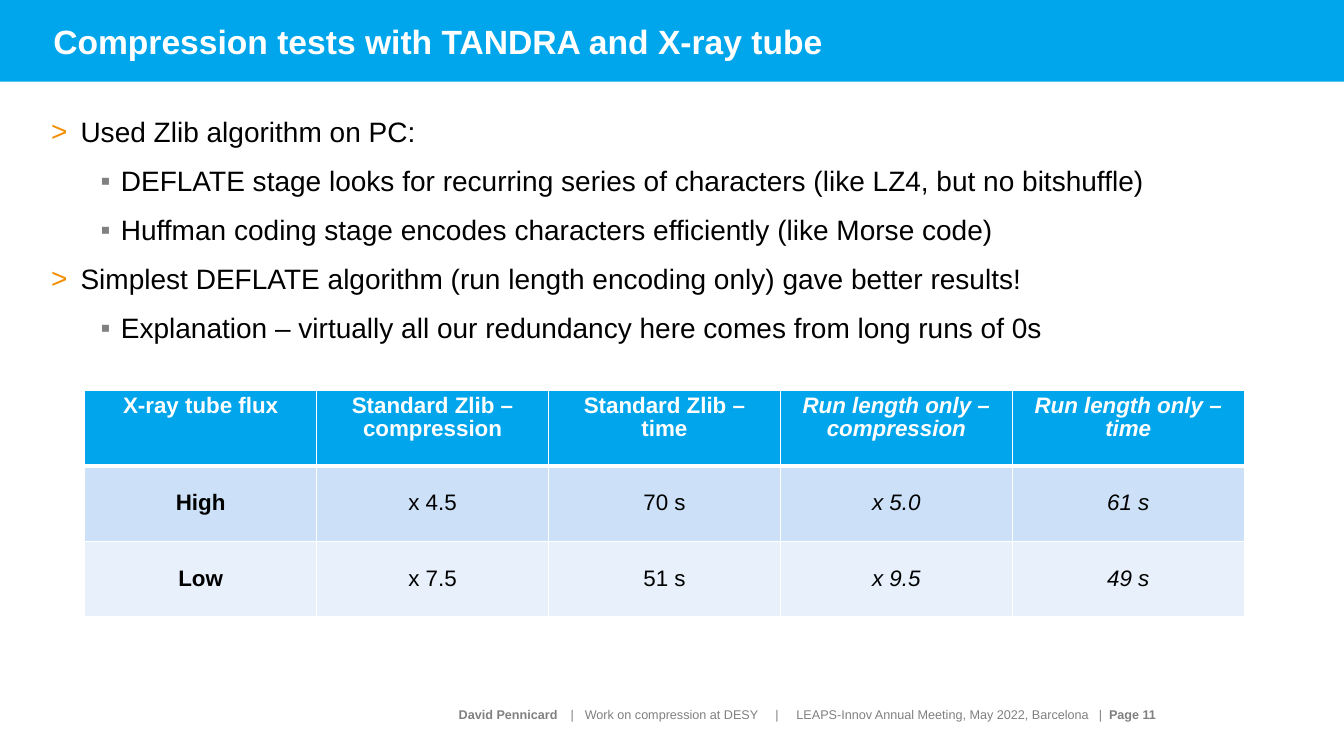
"""Build the slide on compression tests with TANDRA and an X-ray tube."""
from dataclasses import dataclass

import pptx
import pptx.dml.color
import pptx.enum.shapes
import pptx.enum.text
import pptx.oxml
import pptx.oxml.ns
import pptx.util

SCALE = 9144
ANCHOR = pptx.enum.text.MSO_ANCHOR
ALIGN = pptx.enum.text.PP_ALIGN


@dataclass(frozen=True)
class Theme:
    font: str = "Arial"
    banner: str = "00A6EB"
    header: str = "00A5EB"
    bands: tuple[str, ...] = ("CCE1F7", "E7F0FB")
    white: str = "FFFFFF"
    black: str = "000000"
    grey: str = "808080"
    orange: str = "F28E00"
    title_size: int = 24
    body_size: int = 20
    table_size: int = 16
    footer_size: int = 9


THEME = Theme()


@dataclass(frozen=True)
class Frame:
    left: int
    top: int
    width: int
    height: int

    def emu(self) -> tuple[int, ...]:
        return tuple(px(side) for side in (self.left, self.top, self.width, self.height))


@dataclass(frozen=True)
class Style:
    size: int
    color: str
    bold: bool = False
    italic: bool = False


@dataclass(frozen=True)
class Level:
    mark: str
    color: str
    margin: int
    hanging: int


@dataclass(frozen=True)
class Point:
    level: Level
    text: str


MAIN = Level(">", THEME.orange, 29, 29)
SUB = Level("▪", THEME.grey, 69, 20)
POINTS = (
    Point(MAIN, "Used Zlib algorithm on PC:"),
    Point(SUB, "DEFLATE stage looks for recurring series of characters (like LZ4, but no bitshuffle)"),
    Point(SUB, "Huffman coding stage encodes characters efficiently (like Morse code)"),
    Point(MAIN, "Simplest DEFLATE algorithm (run length encoding only) gave better results!"),
    Point(SUB, "Explanation – virtually all our redundancy here comes from long runs of 0s"),
)
RESULTS = (
    ("X-ray tube flux", "Standard Zlib – compression", "Standard Zlib – time",
     "Run length only – compression", "Run length only – time"),
    ("High", "x 4.5", "70 s", "x 5.0", "61 s"),
    ("Low", "x 7.5", "51 s", "x 9.5", "49 s"),
)
FIRST_ITALIC_COLUMN = 3
FOOTER = (
    ("David Pennicard", True),
    ("\t|\tWork on compression at DESY\t|\tLEAPS-Innov Annual Meeting, May 2022, Barcelona\t|\t", False),
    ("Page 11", True),
)
FOOTER_TABS = (111, 125, 314, 335, 635, 645)


def px(length: int) -> int:
    return length * SCALE


def rgb(color: str) -> pptx.dml.color.RGBColor:
    return pptx.dml.color.RGBColor.from_string(color)


def add_element(parent, tag: str, **attributes):
    child = pptx.oxml.parse_xml(f"<{tag} {pptx.oxml.ns.nsdecls('a')}/>")
    for name, value in attributes.items():
        child.set(name, str(value))
    parent.append(child)
    return child


def add_span(para, text: str, style: Style) -> None:
    span = para.add_run()
    span.text = text
    span.font.name = THEME.font
    span.font.size = pptx.util.Pt(style.size)
    span.font.bold = style.bold
    span.font.italic = style.italic
    span.font.color.rgb = rgb(style.color)


def add_box(page, frame: Frame, anchor):
    text_frame = page.shapes.add_textbox(*frame.emu()).text_frame
    text_frame.word_wrap = True
    text_frame.vertical_anchor = anchor
    return text_frame


def add_banner(page) -> None:
    banner = page.shapes.add_shape(
        pptx.enum.shapes.MSO_SHAPE.RECTANGLE, *Frame(0, 0, 1333, 81).emu())
    banner.shadow.inherit = False
    banner.fill.solid()
    banner.fill.fore_color.rgb = rgb(THEME.banner)
    banner.line.fill.background()
    title = add_box(page, Frame(43, 11, 1242, 60), ANCHOR.MIDDLE)
    add_span(title.paragraphs[0], "Compression tests with TANDRA and X-ray tube",
             Style(THEME.title_size, THEME.white, bold=True))


def add_points(page) -> None:
    body = add_box(page, Frame(41, 109, 1242, 268), ANCHOR.TOP)
    for index, point in enumerate(POINTS):
        para = body.add_paragraph() if index else body.paragraphs[0]
        level = point.level
        properties = para._p.get_or_add_pPr()
        properties.set("marL", str(px(level.margin)))
        properties.set("indent", str(px(-level.hanging)))
        bullet_color = add_element(properties, "a:buClr")
        add_element(bullet_color, "a:srgbClr", val=level.color)
        add_element(properties, "a:buFont", typeface=THEME.font)
        add_element(properties, "a:buChar", char=level.mark)
        para.level = int(level is SUB)
        para.space_after = pptx.util.Pt(11)
        add_span(para, point.text, Style(THEME.body_size, THEME.black))


def set_borders(cell, top: int, bottom: int) -> None:
    properties = cell._tc.get_or_add_tcPr()
    widths = {"L": 1, "R": 1, "T": top, "B": bottom}
    for position, (side, width) in enumerate(widths.items()):
        line = add_element(properties, f"a:ln{side}", w=pptx.util.Pt(width))
        add_element(add_element(line, "a:solidFill"), "a:srgbClr", val=THEME.white)
        properties.insert(position, line)


def add_results(page) -> None:
    rows, columns = len(RESULTS), len(RESULTS[0])
    table = page.shapes.add_table(
        rows, columns, *Frame(84, 387, columns * 230, rows * 75).emu()).table
    table.first_row = table.horz_banding = False
    for row, texts in enumerate(RESULTS):
        heading = row == 0
        for column, text in enumerate(texts):
            cell = table.cell(row, column)
            cell.fill.solid()
            cell.fill.fore_color.rgb = rgb(THEME.header if heading else THEME.bands[row - 1])
            set_borders(cell, 3 if row == 1 else 1, 3 if heading else 1)
            cell.vertical_anchor = ANCHOR.TOP if heading else ANCHOR.MIDDLE
            para = cell.text_frame.paragraphs[0]
            para.alignment = ALIGN.CENTER
            para.line_spacing = 0.93
            add_span(para, text, Style(
                THEME.table_size, THEME.white if heading else THEME.black,
                bold=heading or column == 0, italic=column >= FIRST_ITALIC_COLUMN))


def add_footer(page) -> None:
    footer = add_box(page, Frame(41, 687, 1117, 44), ANCHOR.MIDDLE)
    footer.margin_left = px(414)
    footer.margin_right = 0
    para = footer.paragraphs[0]
    stops = add_element(para._p.get_or_add_pPr(), "a:tabLst")
    for position in FOOTER_TABS:
        add_element(stops, "a:tab", pos=px(position), algn="l")
    for text, bold in FOOTER:
        add_span(para, text, Style(THEME.footer_size, THEME.grey, bold=bold))


def main() -> None:
    deck = pptx.Presentation()
    deck.slide_width, deck.slide_height = px(1333), px(750)
    page = deck.slides.add_slide(deck.slide_layouts[6])
    add_banner(page)
    add_footer(page)
    add_points(page)
    add_results(page)
    deck.save("out.pptx")


if __name__ == "__main__":
    main()
